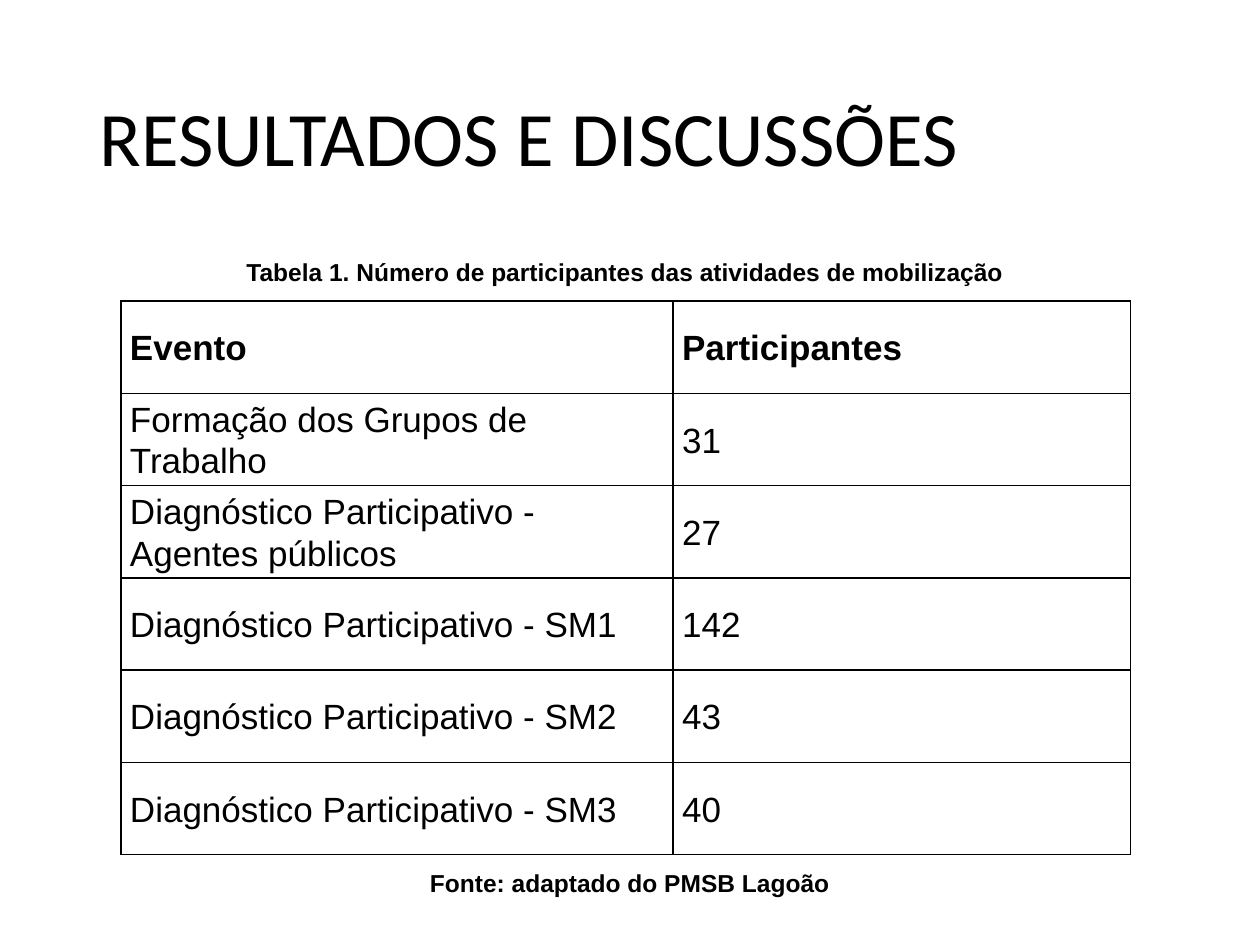
from lxml import etree
from pptx import Presentation
from pptx.dml.color import RGBColor
from pptx.enum.text import MSO_ANCHOR, PP_ALIGN
from pptx.oxml.ns import qn
from pptx.util import Cm, Pt

LEFT, CENTER = PP_ALIGN.LEFT, PP_ALIGN.CENTER
MIDDLE = MSO_ANCHOR.MIDDLE
TITLE_ONLY = 5
COLORS = {"text": "000000", "border": "000000"}

EVENTS = [
    ("Evento", "Participantes"),
    ("Formação dos Grupos de Trabalho", "31"),
    ("Diagnóstico Participativo - Agentes públicos", "27"),
    ("Diagnóstico Participativo - SM1", "142"),
    ("Diagnóstico Participativo - SM2", "43"),
    ("Diagnóstico Participativo - SM3", "40"),
]


def write(tf, text, font="Arial", size=14, bold=False, align=LEFT,
          spacing=None, after=None):
    p = tf.paragraphs[0]
    p.alignment = align
    if spacing is not None:
        p.line_spacing = spacing
    if after is not None:
        p.space_after = Pt(after)
    r = p.add_run()
    r.text = text
    r.font.name, r.font.size, r.font.bold = font, Pt(size), bold
    r.font.color.rgb = RGBColor.from_string(COLORS["text"])


class SlideBuilder:
    def __init__(self, slide):
        self.s = slide
        self.border_width = Pt(1)
        self.cell_margin = Cm(0.18)

    def title(self, text, x, y, w, h):
        sp = self.s.shapes.title
        sp.left, sp.top, sp.width, sp.height = Cm(x), Cm(y), Cm(w), Cm(h)
        sp.text_frame.vertical_anchor = MIDDLE
        write(sp.text_frame, text, font="Calibri", size=44, spacing=0.9)

    def caption(self, text, x, y, w, h):
        sp = self.s.shapes.add_textbox(Cm(x), Cm(y), Cm(w), Cm(h))
        sp.text_frame.word_wrap = True
        write(sp.text_frame, text, bold=True, align=CENTER)

    def table(self, rows, x, y, widths, row_height):
        frame = self.s.shapes.add_table(
            len(rows), len(widths), Cm(x), Cm(y),
            Cm(sum(widths)), Cm(row_height * len(rows)))
        table = frame.table
        table.first_row = table.horz_banding = False
        for column, width in zip(table.columns, widths):
            column.width = Cm(width)
        for i, row in enumerate(rows):
            table.rows[i].height = Cm(row_height)
            for j, text in enumerate(row):
                self.cell(table.cell(i, j), text, bold=i == 0,
                          after=8 if j else 0)

    def cell(self, cell, text, **style):
        cell.vertical_anchor = MIDDLE
        cell.margin_left = cell.margin_right = self.cell_margin
        cell.margin_top = cell.margin_bottom = 0
        cell.fill.background()
        write(cell.text_frame, text, size=20, spacing=1.07, **style)
        # Borders come before the fill in the cell properties
        tc_pr = cell._tc.get_or_add_tcPr()
        for i, side in enumerate(("lnL", "lnR", "lnT", "lnB")):
            ln = etree.Element(qn(f"a:{side}"), w=str(self.border_width))
            fill = etree.SubElement(ln, qn("a:solidFill"))
            etree.SubElement(fill, qn("a:srgbClr"), val=COLORS["border"])
            tc_pr.insert(i, ln)


def main():
    prs = Presentation()
    prs.slide_width, prs.slide_height = Cm(25.4), Cm(19.05)
    builder = SlideBuilder(
        prs.slides.add_slide(prs.slide_layouts[TITLE_ONLY]))

    # Heading
    builder.title("RESULTADOS E DISCUSSÕES", 1.75, 1.02, 21.9, 3.68)

    # Participants table with its caption and source
    builder.table(EVENTS, 2.44, 6.07, widths=(11.13, 9.22), row_height=1.86)
    builder.caption(
        "Tabela 1. Número de participantes das atividades de mobilização",
        -0.1, 5.05, 25.4, 0.86)
    builder.caption("Fonte: adaptado do PMSB Lagoão", 0, 17.37, 25.4, 0.86)

    prs.save("out.pptx")


if __name__ == "__main__":
    main()
